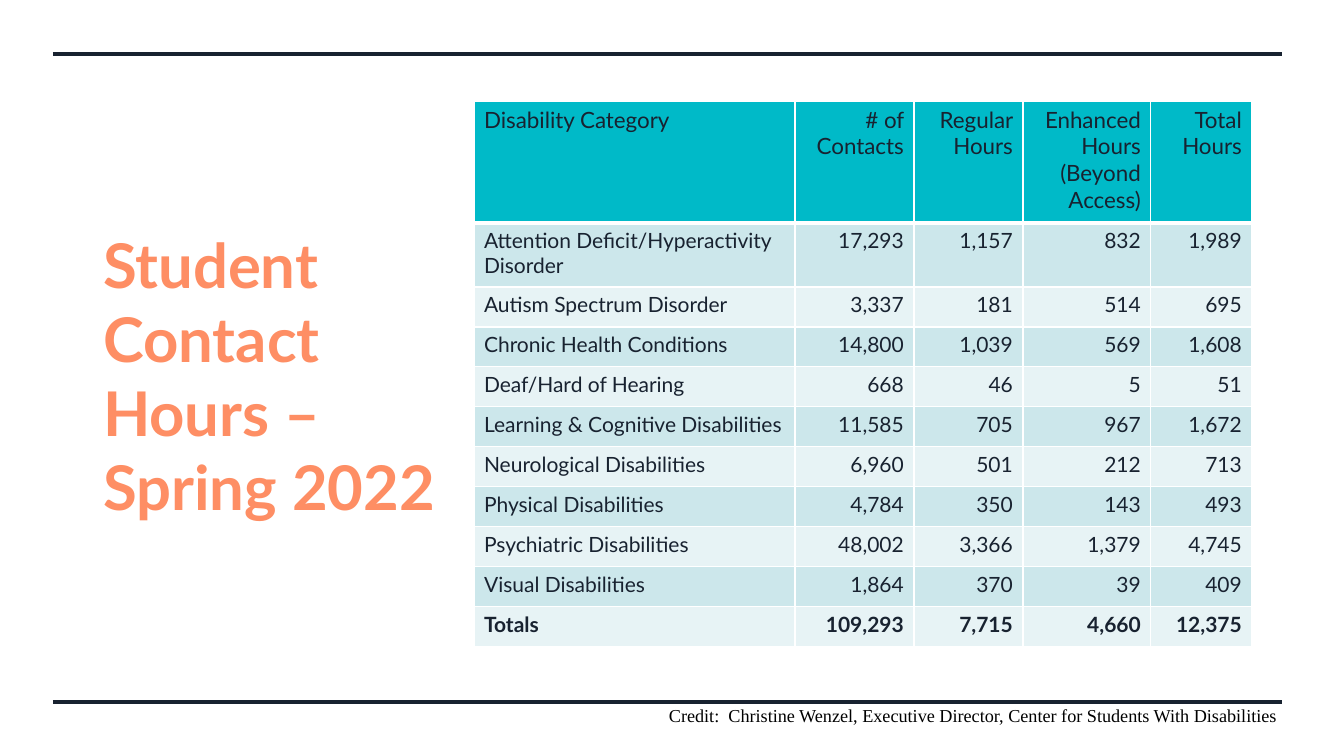
from lxml import etree
from pptx import Presentation
from pptx import util as u
from pptx.dml.color import RGBColor
from pptx.enum import shapes, text
from pptx.oxml import ns

NAVY = RGBColor(0x18, 0x22, 0x30)
ORANGE = RGBColor(0xFE, 0x8E, 0x64)
TEAL = RGBColor(0x00, 0xBA, 0xC8)
BAND_DARK = RGBColor(0xCC, 0xE7, 0xEB)
BAND_LIGHT = RGBColor(0xE7, 0xF3, 0xF5)
WHITE = RGBColor(0xFF, 0xFF, 0xFF)
BLACK = RGBColor(0x00, 0x00, 0x00)


def px(*lengths):
    return [u.Emu(round(length * 914400 / 100.8)) for length in lengths]


def write(paragraph, words, color, align, **formats):
    paragraph.alignment = align
    run = paragraph.add_run()
    run.text = words
    run.font.color.rgb = color
    for name, value in formats.items():
        setattr(run.font, name, value)


prs = Presentation()
prs.slide_width, prs.slide_height = px(1344, 756)
slide = prs.slides.add_slide(prs.slide_layouts[5])
LEFT, RIGHT = text.PP_ALIGN.LEFT, text.PP_ALIGN.RIGHT

title = slide.shapes.title
title.left, title.top, title.width, title.height = px(93, 68, 353, 614)
frame_format = {
    "word_wrap": True,
    "auto_size": text.MSO_AUTO_SIZE.NONE,
    "vertical_anchor": text.MSO_ANCHOR.MIDDLE,
}
for name, value in frame_format.items():
    setattr(title.text_frame, name, value)
write(title.text_frame.paragraphs[0], "Student Contact Hours – Spring 2022", ORANGE, LEFT,
      name="Lato", size=u.Pt(44), bold=True)

for rule_y in (54, 702):
    rule = slide.shapes.add_connector(shapes.MSO_CONNECTOR.STRAIGHT, *px(53, rule_y, 1282, rule_y))
    rule.line.color.rgb = NAVY
    rule.line.width = u.Pt(2.25)
    etree.SubElement(rule.element.spPr, ns.qn("a:effectLst"))

contact_rows = [
    ("Disability Category", "# of Contacts", "Regular Hours", "Enhanced Hours (Beyond Access)", "Total Hours"),
    ("Attention Deficit/Hyperactivity Disorder", "17,293", "1,157", "832", "1,989"),
    ("Autism Spectrum Disorder", "3,337", "181", "514", "695"),
    ("Chronic Health Conditions", "14,800", "1,039", "569", "1,608"),
    ("Deaf/Hard of Hearing", "668", "46", "5", "51"),
    ("Learning & Cognitive Disabilities", "11,585", "705", "967", "1,672"),
    ("Neurological Disabilities", "6,960", "501", "212", "713"),
    ("Physical Disabilities", "4,784", "350", "143", "493"),
    ("Psychiatric Disabilities", "48,002", "3,366", "1,379", "4,745"),
    ("Visual Disabilities", "1,864", "370", "39", "409"),
    ("Totals", "109,293", "7,715", "4,660", "12,375"),
]
column_widths = [321, 119, 109, 128, 101]
row_heights = [122, 64] + [40] * 9
last_row = len(contact_rows) - 1

contacts = slide.shapes.add_table(
    len(contact_rows), len(column_widths),
    *px(474, 101, sum(column_widths), sum(row_heights))).table
for column, width in zip(contacts.columns, px(*column_widths)):
    column.width = width
for row, height in zip(contacts.rows, px(*row_heights)):
    row.height = height

for r, values in enumerate(contact_rows):
    band = TEAL if r == 0 else BAND_DARK if r % 2 else BAND_LIGHT
    for c, value in enumerate(values):
        cell = contacts.cell(r, c)
        write(cell.text_frame.paragraphs[0], value, NAVY, RIGHT if c else LEFT,
              name="Lato", size=u.Pt(15 if r else 16), bold=r == last_row)
        cell_format = cell._tc.get_or_add_tcPr()
        for side in ("L", "R", "T", "B"):
            heavy = (r, side) in ((0, "B"), (1, "T"))
            border = etree.SubElement(cell_format, ns.qn("a:ln" + side), w=str(u.Pt(3 if heavy else 1)))
            paint = etree.SubElement(border, ns.qn("a:solidFill"))
            etree.SubElement(paint, ns.qn("a:srgbClr"), val=str(WHITE))
        cell.fill.solid()
        cell.fill.fore_color.rgb = band

credit = slide.shapes.add_textbox(*px(659, 699, 672, 32))
credit.text_frame.word_wrap = True
credit.text_frame.auto_size = text.MSO_AUTO_SIZE.SHAPE_TO_FIT_TEXT
write(credit.text_frame.paragraphs[0],
      "Credit:  Christine Wenzel, Executive Director, Center for Students With Disabilities",
      BLACK, LEFT, name="Times New Roman", size=u.Pt(13))

prs.save("out.pptx")
